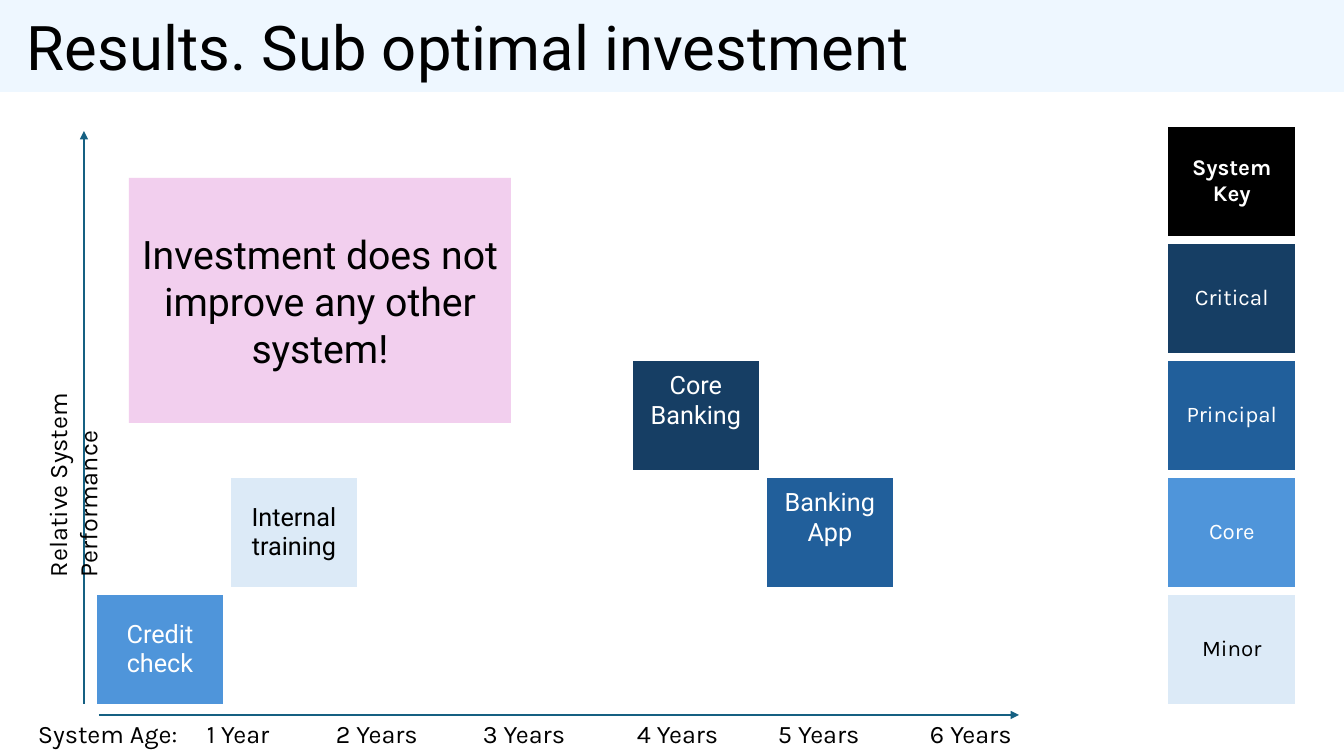
from lxml.etree import SubElement
from pptx import Presentation
from pptx.dml.color import RGBColor
from pptx.enum.shapes import MSO_CONNECTOR as Connector, MSO_SHAPE as Preset
from pptx.enum.text import MSO_ANCHOR as Anchor, MSO_AUTO_SIZE as Fit, PP_ALIGN as Align
from pptx.oxml.ns import qn
from pptx.util import Emu, Pt

COLOURS = {
    "white": "FFFFFF", "black": "000000", "band": "EEF7FF", "axis": "156082", "callout": "F2CFEE",
    "critical": "163E64", "principal": "215F9B", "core": "4F95DA", "minor": "DCEAF7",
}
COLUMNS, ROWS = 9, 5
COLUMN_WIDTH, ROW_HEIGHT = 134, 117
CELL_MARGIN, TEXT_LINE = 5, 29

KEY = [
    ("System Key", "black", "white", True),
    ("Critical", "critical", "white", False),
    ("Principal", "principal", "white", False),
    ("Core", "core", "white", False),
    ("Minor", "minor", "black", False),
]
SYSTEMS = [
    ("Core Banking", 2, 4, "critical", "white", TEXT_LINE),
    ("Internal training", 3, 1, "minor", "black", 0),
    ("Banking App", 3, 5, "principal", "white", TEXT_LINE),
    ("Credit check", 4, 0, "core", "white", 0),
]
AGES = ["System Age:", "1 Year", "2 Years", "3 Years", "4 Years", "5 Years", "6 Years"]
AGE_TABS = [169, 298, 445, 599, 740, 892]


def px(length):
    return Emu(round(length * 914400 / 100.8))


def colour(name):
    return RGBColor.from_string(COLOURS[name])


class Page:
    """Draws styled elements on one slide."""

    def __init__(self, deck):
        self.slide = deck.slides.add_slide(deck.slide_layouts[5])
        self.shapes = self.slide.shapes

    def paint(self, target, name):
        target.fill.solid()
        target.fill.fore_color.rgb = colour(name)

    def set_text(self, frame, text, size, face="Roboto", ink="black", bold=False,
                 align=Align.LEFT, tabs=(), **layout):
        layout = {"word_wrap": True, "auto_size": Fit.NONE, **layout}
        for name, value in layout.items():
            setattr(frame, name, value)
        frame.text = text
        para = frame.paragraphs[0]
        para.alignment = align
        if tabs:
            stops = SubElement(para._p.get_or_add_pPr(), qn("a:tabLst"))
            for stop in tabs:
                SubElement(stops, qn("a:tab"), pos=str(px(stop)), algn="l")
        span = para.runs[0]
        for name, value in {"size": Pt(size), "name": face, "bold": bold}.items():
            setattr(span.font, name, value)
        span.font.color.rgb = colour(ink)

    def title(self, text, box):
        title = self.shapes.title
        for name, value in zip(("left", "top", "width", "height"), box):
            setattr(title, name, px(value))
        self.paint(title, "band")
        sides = ("left", "top", "right", "bottom")
        margins = {f"margin_{side}": px(27) for side in sides}
        self.set_text(title.text_frame, text, 44, vertical_anchor=Anchor.MIDDLE, **margins)

    def grid(self, box):
        table = self.shapes.add_table(ROWS, COLUMNS, *map(px, box)).table
        table.first_row = table.horz_banding = False
        for column in table.columns:
            column.width = px(COLUMN_WIDTH)
        for row in table.rows:
            row.height = px(ROW_HEIGHT)
        for cell in table.iter_cells():
            properties = cell._tc.get_or_add_tcPr()
            for side in ("lnL", "lnR", "lnT", "lnB"):
                border = SubElement(properties, qn(f"a:{side}"), w=str(Pt(6)))
                fill = SubElement(border, qn("a:solidFill"))
                SubElement(fill, qn("a:srgbClr"), val=COLOURS["white"])
            self.paint(cell, "white")
        return table

    def label(self, cell, text, fill, ink, size, face="Roboto", bold=False, lift=0):
        self.paint(cell, fill)
        self.set_text(cell.text_frame, text, size, face, ink, bold, Align.CENTER)
        cell.vertical_anchor = Anchor.MIDDLE
        cell.margin_bottom = px(CELL_MARGIN + lift)

    def arrow(self, *ends):
        arrow = self.shapes.add_connector(Connector.STRAIGHT, *map(px, ends))
        arrow.line.color.rgb = colour("axis")
        arrow.line.width = Pt(1.5)
        SubElement(arrow.line._get_or_add_ln(), qn("a:tailEnd"), type="triangle")
        SubElement(arrow._element.spPr, qn("a:effectLst"))

    def callout(self, text, box):
        shape = self.shapes.add_shape(Preset.RECTANGLE, *map(px, box))
        shape.shadow.inherit = False
        shape.line.fill.background()
        self.paint(shape, "callout")
        self.set_text(shape.text_frame, text, 28, align=Align.CENTER, vertical_anchor=Anchor.MIDDLE)

    def caption(self, text, box, rotation=0, tabs=()):
        caption = self.shapes.add_textbox(*map(px, box))
        caption.rotation = rotation
        self.set_text(caption.text_frame, text, 18, "Karla", tabs=tabs)


def main():
    deck = Presentation()
    deck.slide_width, deck.slide_height = px(1344), px(756)
    page = Page(deck)
    page.title("Results. Sub optimal investment", (0, 0, 1344, 92))

    table = page.grid((93, 123, COLUMNS * COLUMN_WIDTH, ROWS * ROW_HEIGHT))
    for row, (text, fill, ink, bold) in enumerate(KEY):
        page.label(table.cell(row, COLUMNS - 1), text, fill, ink, 16, "Karla", bold)
    for text, row, column, fill, ink, lift in SYSTEMS:
        page.label(table.cell(row, column), text, fill, ink, 18, lift=lift)

    page.arrow(84, 704, 84, 131)
    page.arrow(99, 715, 1019, 715)
    page.caption("Relative System Performance", (-116, 394, 346, 40), rotation=270)
    page.callout("Investment does not improve any other system!", (129, 178, 382, 245))
    page.caption("\t".join(AGES), (28, 713, 1030, 40), tabs=AGE_TABS)
    deck.save("out.pptx")


if __name__ == "__main__":
    main()
